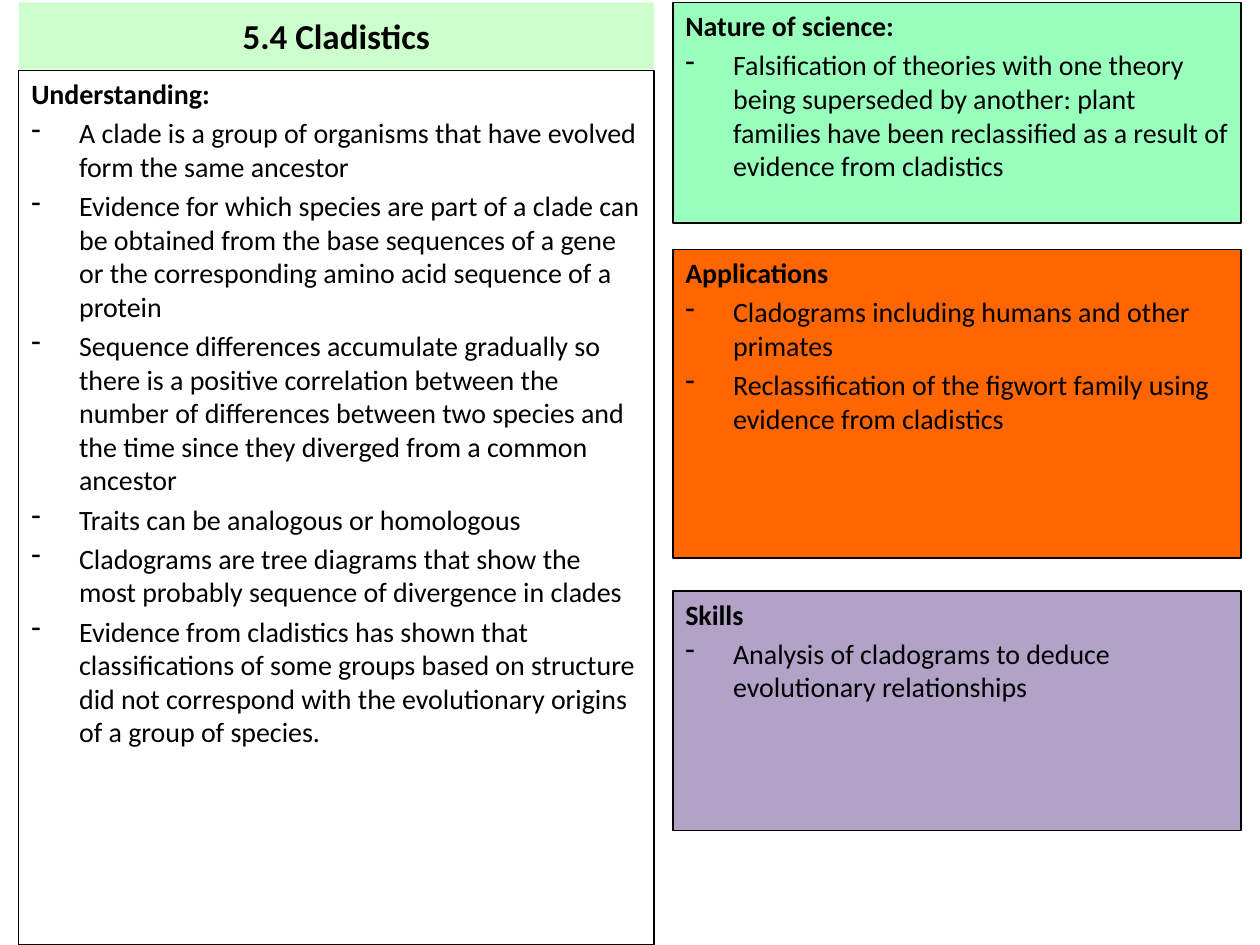
from dataclasses import dataclass

from lxml import etree
from pptx import Presentation
from pptx import util as u
from pptx.dml.color import RGBColor
from pptx.enum import shapes, text
from pptx.oxml.ns import qn


@dataclass(frozen=True)
class Theme:
    font: str = "Calibri"
    ink: str = "000000"
    title_fill: str = "CCFFCC"
    science_fill: str = "98FFBC"
    applications_fill: str = "FF6600"
    skills_fill: str = "B3A2C7"
    title_size: float = 20
    body_size: float = 16
    space_before: float = 3.2
    outline: float = 0.75
    indent: float = 0.38


class SlideBuilder:
    def __init__(self, slide, theme):
        self.slide = slide
        self.theme = theme

    def box(self, left, top, width, height, fill=None, outlined=True):
        box = self.slide.shapes.add_shape(
            shapes.MSO_SHAPE.RECTANGLE,
            u.Inches(left), u.Inches(top), u.Inches(width), u.Inches(height),
        )
        box.shadow.inherit = False
        if fill:
            box.fill.solid()
            box.fill.fore_color.rgb = RGBColor.from_string(fill)
        else:
            box.fill.background()
        if outlined:
            box.line.color.rgb = RGBColor.from_string(self.theme.ink)
            box.line.width = u.Pt(self.theme.outline)
        else:
            box.line.fill.background()
        box.text_frame.word_wrap = True
        return box

    def format(self, para, size, bold, align):
        para.alignment = align
        for span in para.runs:
            span.font.name = self.theme.font
            span.font.size = u.Pt(size)
            span.font.bold = bold
            span.font.color.rgb = RGBColor.from_string(self.theme.ink)

    def dash(self, para):
        properties = para._p.get_or_add_pPr()
        indent = u.Inches(self.theme.indent)
        properties.set("marL", str(indent))
        properties.set("indent", str(-indent))
        etree.SubElement(properties, qn("a:buChar")).set("char", "-")

    def title(self, left, top, width, height, wording):
        box = self.box(left, top, width, height, self.theme.title_fill, outlined=False)
        box.text_frame.text = wording
        box.text_frame.vertical_anchor = text.MSO_ANCHOR.MIDDLE
        self.format(box.text_frame.paragraphs[0], self.theme.title_size, True,
                    text.PP_ALIGN.CENTER)

    def panel(self, left, top, width, height, fill, heading, points):
        frame = self.box(left, top, width, height, fill).text_frame
        frame.vertical_anchor = text.MSO_ANCHOR.TOP
        frame.text = "\n".join([heading, *points])
        for index, para in enumerate(frame.paragraphs):
            self.format(para, self.theme.body_size, index == 0, text.PP_ALIGN.LEFT)
            para.space_before = u.Pt(self.theme.space_before)
            if index:
                self.dash(para)


UNDERSTANDING = [
    "A clade is a group of organisms that have evolved form the same ancestor",
    "Evidence for which species are part of a clade can be obtained from the base "
    "sequences of a gene or the corresponding amino acid sequence of a protein",
    "Sequence differences accumulate gradually so there is a positive correlation "
    "between the number of differences between two species and the time since they "
    "diverged from a common ancestor",
    "Traits can be analogous or homologous",
    "Cladograms are tree diagrams that show the most probably sequence of "
    "divergence in clades",
    "Evidence from cladistics has shown that classifications of some groups based "
    "on structure did not correspond with the evolutionary origins of a group of "
    "species.",
]


def main():
    deck = Presentation()
    deck.slide_width, deck.slide_height = u.Inches(10), u.Inches(7.5)
    theme = Theme()
    builder = SlideBuilder(deck.slides.add_slide(deck.slide_layouts[6]), theme)

    left, left_width = 0.15, 5.04
    builder.title(left, 0.02, left_width, 0.53, "5.4 Cladistics")
    builder.panel(left, 0.56, left_width, 6.94, None, "Understanding:", UNDERSTANDING)

    right_panels = [
        (0.02, 1.75, theme.science_fill, "Nature of science:", [
            "Falsification of theories with one theory being superseded by another: "
            "plant families have been reclassified as a result of evidence from "
            "cladistics",
        ]),
        (1.98, 2.45, theme.applications_fill, "Applications", [
            "Cladograms including humans and other primates",
            "Reclassification of the figwort family using evidence from cladistics",
        ]),
        (4.69, 1.9, theme.skills_fill, "Skills", [
            "Analysis of cladograms to deduce evolutionary relationships",
        ]),
    ]
    for top, height, fill, heading, points in right_panels:
        builder.panel(5.34, top, 4.51, height, fill, heading, points)

    deck.save("out.pptx")


if __name__ == "__main__":
    main()
